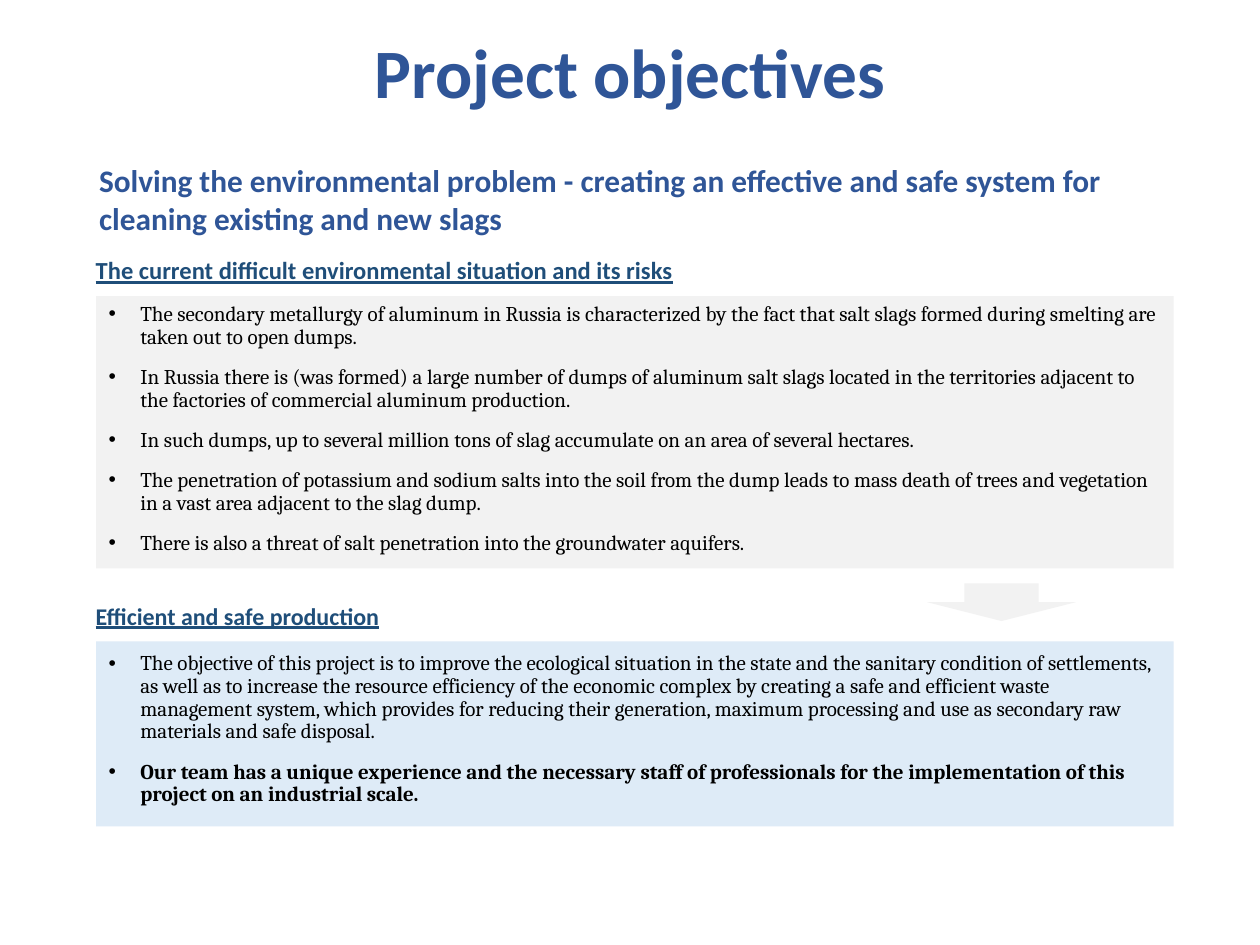
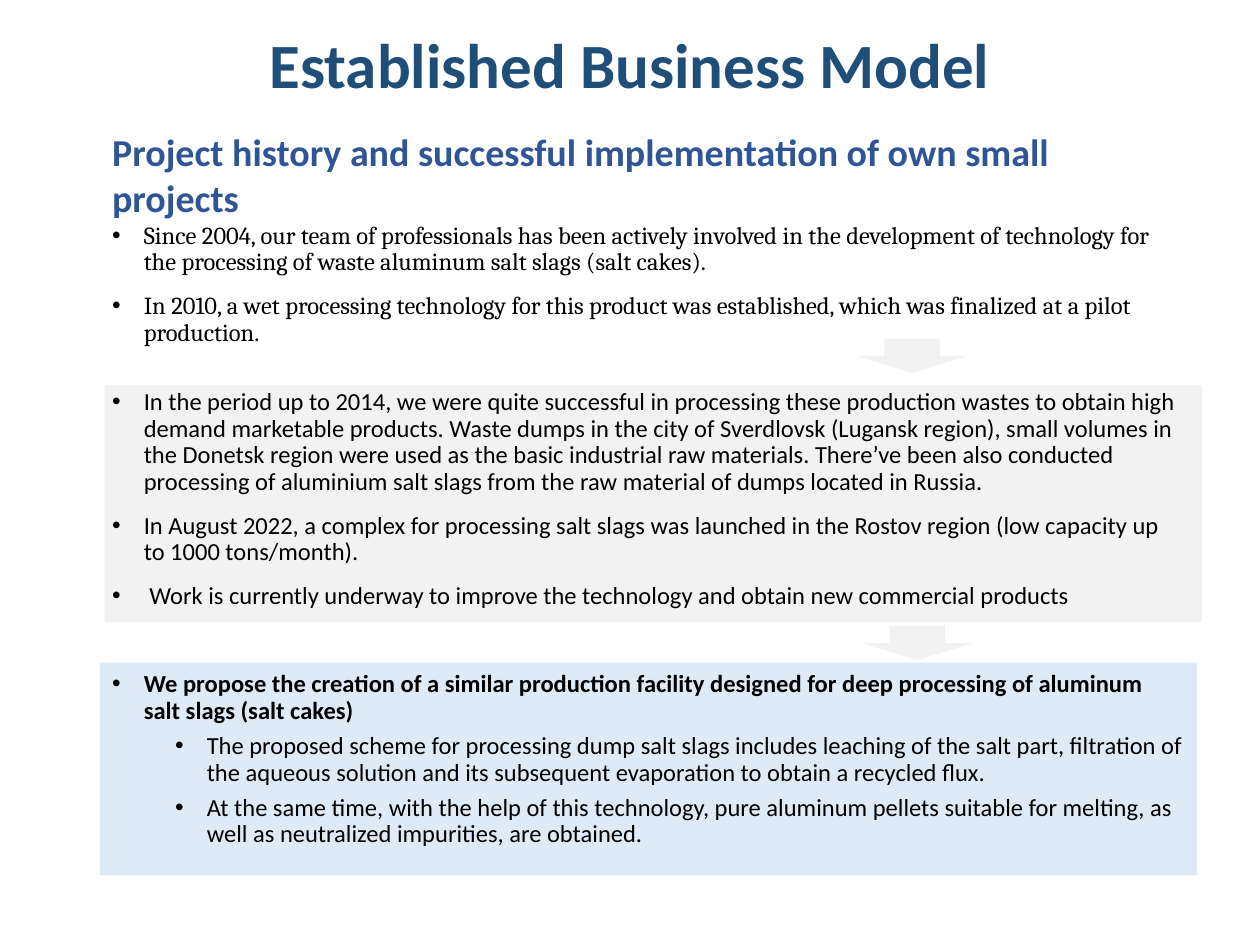
from lxml import etree
from pptx import Presentation
from pptx.dml.color import RGBColor
from pptx.enum.shapes import MSO_SHAPE
from pptx.enum.text import MSO_ANCHOR, MSO_AUTO_SIZE, PP_ALIGN
from pptx.oxml.ns import qn
from pptx.util import Cm, Pt

RECTANGLE, DOWN_ARROW = MSO_SHAPE.RECTANGLE, MSO_SHAPE.DOWN_ARROW
TOP, MIDDLE, BOTTOM = MSO_ANCHOR.TOP, MSO_ANCHOR.MIDDLE, MSO_ANCHOR.BOTTOM
LEFT, CENTER = PP_ALIGN.LEFT, PP_ALIGN.CENTER
NO_AUTOFIT = MSO_AUTO_SIZE.NONE

TITLE_ONLY = 5
HEADING_FONT, BODY_FONT = "Calibri", "Cambria"
BLUE, NAVY, BLACK = "2F5597", "1F4E79", "000000"
GREY_PANEL, BLUE_PANEL = "F2F2F2", "DEEBF7"
BULLET_INDENT = Cm(0.64)
LEVEL_INDENT = Cm(1.27)


def color(hex_string):
    return RGBColor.from_string(hex_string)


def lengths(box):
    return [Cm(value) for value in box]


def format_run(run, size, font, hex_string, bold=False, underline=False):
    run.font.size = Pt(size)
    run.font.name = font
    run.font.color.rgb = color(hex_string)
    run.font.bold = bold
    run.font.underline = underline


def prepare_frame(frame, anchor, insets):
    frame.word_wrap = True
    frame.auto_size = NO_AUTOFIT
    frame.vertical_anchor = anchor
    (frame.margin_left, frame.margin_top,
     frame.margin_right, frame.margin_bottom) = lengths(insets)


def add_filled(slide, preset, box, fill):
    filled = slide.shapes.add_shape(preset, *lengths(box))
    filled.shadow.inherit = False
    filled.fill.solid()
    filled.fill.fore_color.rgb = color(fill)
    filled.line.fill.background()
    return filled


def add_title(slide, box, text, size, hex_string, anchor):
    title = slide.shapes.title
    title.left, title.top, title.width, title.height = lengths(box)
    frame = title.text_frame
    frame.text = text
    prepare_frame(frame, anchor, (0.25, 0.13, 0.25, 0.25 if anchor == BOTTOM else 0.13))
    paragraph = frame.paragraphs[0]
    paragraph.alignment = CENTER
    paragraph.line_spacing = 0.9
    format_run(paragraph.runs[0], size, HEADING_FONT, hex_string, bold=True)


def add_heading(slide, box, text, size, hex_string=BLUE, anchor=TOP, underline=False):
    frame = slide.shapes.add_textbox(*lengths(box)).text_frame
    frame.text = text
    prepare_frame(frame, anchor, (0.25, 0.13, 0.25, 0.18))
    format_run(frame.paragraphs[0].runs[0], size, HEADING_FONT, hex_string, True, underline)


def add_bullet(paragraph, level):
    paragraph.alignment = LEFT
    paragraph.level = level
    paragraph.line_spacing = 0.9
    paragraph.space_before = Pt(5 if level else 10)
    properties = paragraph._p.get_or_add_pPr()
    properties.set("marL", str(BULLET_INDENT + level * LEVEL_INDENT))
    properties.set("indent", str(-BULLET_INDENT))
    etree.SubElement(properties, qn("a:buFont")).set("typeface", "Arial")
    etree.SubElement(properties, qn("a:buChar")).set("char", "•")


def add_bullets(slide, box, items, size, font, fill=None, insets=(0.25, 0.13, 0.25, 0.13)):
    if fill:
        panel = add_filled(slide, RECTANGLE, box, fill)
    else:
        panel = slide.shapes.add_textbox(*lengths(box))
    frame = panel.text_frame
    prepare_frame(frame, TOP, insets)
    frame.text = "\n".join(text for text, _, _ in items)
    for paragraph, (_, level, bold) in zip(frame.paragraphs, items):
        add_bullet(paragraph, level)
        format_run(paragraph.runs[0], size, font, BLACK, bold)


def plain(*texts):
    return [(text, 0, False) for text in texts]


def add_section(slide, box, heading, heading_height, heading_size, items, fill, top_inset):
    left, top, width, height = box
    add_heading(slide, (left - 0.26, top - heading_height - 0.05, width, heading_height),
                heading, heading_size, NAVY, BOTTOM, True)
    add_bullets(slide, box, items, 12, BODY_FONT, fill, (0.25, top_inset, 0.25, 0.13))


def build_objectives(slide):
    add_title(slide, (1.75, 0.61, 21.9, 1.83), "Project objectives", 39.6, BLUE, MIDDLE)
    add_heading(slide, (1.75, 3.12, 21.9, 1.55),
                "Solving the environmental problem - creating an effective and safe system "
                "for cleaning existing and new slags", 17.9)
    risks = plain(
        "The secondary metallurgy of aluminum in Russia is characterized by the fact that "
        "salt slags formed during smelting are taken out to open dumps.",
        "In Russia there is (was formed) a large number of dumps of aluminum salt slags "
        "located in the territories adjacent to the factories of commercial aluminum production.",
        "In such dumps, up to several million tons of slag accumulate on an area of several hectares.",
        "The penetration of potassium and sodium salts into the soil from the dump leads to "
        "mass death of trees and vegetation in a vast area adjacent to the slag dump.",
        "There is also a threat of salt penetration into the groundwater aquifers.")
    add_section(slide, (1.94, 5.97, 21.72, 5.49),
                "The current difficult environmental situation and its risks", 0.89, 14,
                risks, GREY_PANEL, 0.15)
    objectives = plain(
        "The objective of this project is to improve the ecological situation in the state "
        "and the sanitary condition of settlements, as well as to increase the resource "
        "efficiency of the economic complex by creating a safe and efficient waste management "
        "system, which provides for reducing their generation, maximum processing and use as "
        "secondary raw materials and safe disposal.")
    objectives.append((
        "Our team has a unique experience and the necessary staff of professionals for the "
        "implementation of this project on an industrial scale.", 0, True))
    add_section(slide, (1.94, 12.93, 21.72, 3.73), "Efficient and safe production", 1.07, 13.7,
                objectives, BLUE_PANEL, 0.23)
    add_filled(slide, DOWN_ARROW, (18.69, 11.76, 3, 0.76), GREY_PANEL)


def build_business_model(slide):
    add_title(slide, (1.75, 1.02, 21.9, 1.3), "Established Business Model", 36, NAVY, BOTTOM)
    add_heading(slide, (2.01, 2.46, 22.12, 1.75),
                "Project history and successful implementation of own small projects", 21.7)
    history = plain(
        "Since 2004, our team of professionals has been actively involved in the development "
        "of technology for the processing of waste aluminum salt slags (salt cakes).",
        "In 2010, a wet processing technology for this product was established, which was "
        "finalized at a pilot production.")
    add_bullets(slide, (2.01, 4.37, 22.12, 2.8), history, 14, BODY_FONT)
    results = plain(
        "In the period up to 2014, we were quite successful in processing these production "
        "wastes to obtain high demand marketable products. Waste dumps in the city of "
        "Sverdlovsk (Lugansk region), small volumes in the Donetsk region were used as the "
        "basic industrial raw materials. There’ve been also conducted processing of aluminium "
        "salt slags from the raw material of dumps located in Russia.",
        "In August 2022, a complex for processing salt slags was launched in the Rostov region "
        "(low capacity up to 1000 tons/month).",
        " Work is currently underway to improve the technology and obtain new commercial products")
    add_bullets(slide, (2.11, 7.77, 22.12, 4.78), results, 14, HEADING_FONT, GREY_PANEL,
                (0.15, 0.08, 0.35, 0.05))
    proposal = [
        ("We propose the creation of a similar production facility designed for deep processing "
         "of aluminum salt slags (salt cakes)", 0, True),
        ("The proposed scheme for processing dump salt slags includes leaching of the salt part, "
         "filtration of the aqueous solution and its subsequent evaporation to obtain a recycled "
         "flux.", 1, False),
        ("At the same time, with the help of this technology, pure aluminum pellets suitable for "
         "melting, as well as neutralized impurities, are obtained.", 1, False)]
    add_bullets(slide, (2.01, 13.36, 22.12, 4.29), proposal, 14, HEADING_FONT, BLUE_PANEL,
                (0.25, 0.18, 0.25, 0.13))
    for left, top in ((17.27, 6.83), (17.37, 12.62)):
        add_filled(slide, DOWN_ARROW, (left, top, 2.24, 0.69), GREY_PANEL)


def main():
    presentation = Presentation()
    presentation.slide_width, presentation.slide_height = Cm(25.4), Cm(19.05)
    for build in (build_objectives, build_business_model):
        build(presentation.slides.add_slide(presentation.slide_layouts[TITLE_ONLY]))
    presentation.save("out.pptx")


if __name__ == "__main__":
    main()
